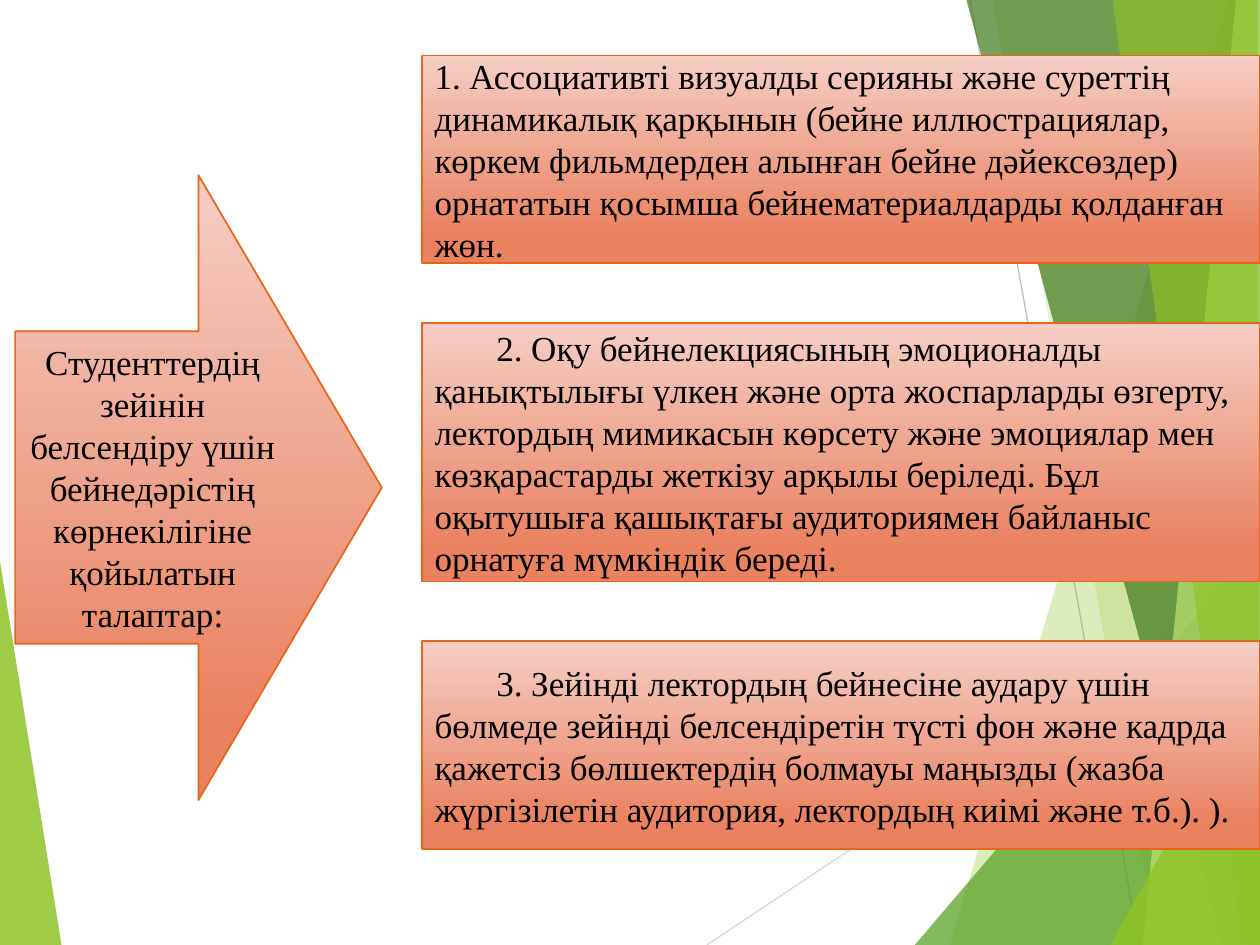
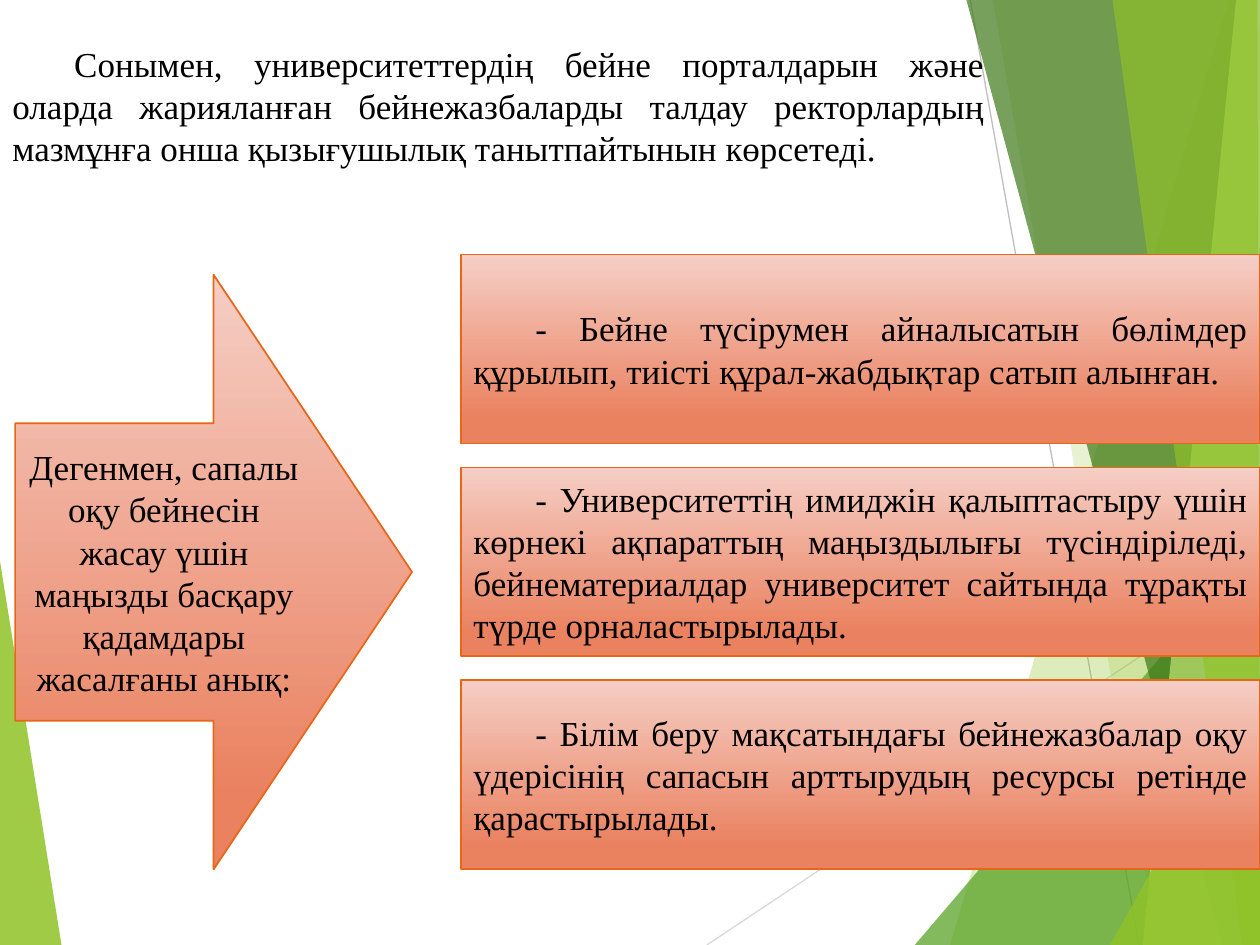
"""Build two slides on video lectures over a green faceted backdrop."""
from dataclasses import dataclass

from lxml import etree
from pptx import Presentation
from pptx.dml.color import RGBColor
from pptx.enum.shapes import MSO_CONNECTOR, MSO_SHAPE
from pptx.enum.text import MSO_ANCHOR, MSO_AUTO_SIZE, PP_ALIGN
from pptx.oxml.ns import qn
from pptx.util import Inches, Pt

ARROW, RECT = MSO_SHAPE.RIGHT_ARROW, MSO_SHAPE.RECTANGLE
LINE = MSO_CONNECTOR.STRAIGHT
MIDDLE, GROW = MSO_ANCHOR.MIDDLE, MSO_AUTO_SIZE.SHAPE_TO_FIT_TEXT
LEFT, CENTER, JUSTIFY = PP_ALIGN.LEFT, PP_ALIGN.CENTER, PP_ALIGN.JUSTIFY

COLS, ROWS = 100, 75
WIDTH, HEIGHT = Inches(10), Inches(7.5)
FONT, SIZE = "Times New Roman", Pt(20)
INDENT = 4.9
COLORS = {
    "lime": "90C226", "green": "54A021", "forest": "3F7819", "pale": "C0E474",
    "mist": "D9D9D9", "gray": "BFBFBF", "blush": "F5CEC5", "coral": "EA815F",
    "rust": "E76618", "black": "000000",
}


@dataclass(frozen=True)
class Facet:
    """A translucent polygon given by grid points."""
    color: str
    alpha: int
    points: tuple[tuple[float, float], ...]


@dataclass(frozen=True)
class Ray:
    """A thin line between two grid points."""
    color: str
    start: tuple[float, float]
    end: tuple[float, float]


@dataclass(frozen=True)
class Area:
    """A rectangle on the grid."""
    left: float
    top: float
    width: float
    height: float


@dataclass(frozen=True)
class Item:
    """A box's text, its height in rows and its first-line indent."""
    text: str
    height: float
    indent: float = INDENT


@dataclass(frozen=True)
class Page:
    """An arrow that points at a stack of boxes reaching the right edge."""
    arrow: Area
    claim: str
    left: float
    top: float
    gap: float
    align: PP_ALIGN
    items: tuple[Item, ...]
    intro: str = ""


DECOR = (
    Facet("lime", 85, ((-0.1, 43.9), (4.9, 75.1), (-0.1, 75))),
    Ray("mist", (56.1, 75), (100.1, 45.7)),
    Ray("gray", (77, 0), (90.4, 75)),
    Facet("lime", 30, ((97.5, 0), (75.4, 75), (100.2, 75.1), (100.1, 0))),
    Facet("lime", 20, ((78.8, 0), (91.9, 75), (100.1, 75), (100.1, 0))),
    Facet("green", 72, ((72.6, 75), (100, 42.9), (100.1, 75))),
    Facet("forest", 70, ((76.7, 0), (97, 75), (100.1, 75), (100.1, 0))),
    Facet("pale", 70, ((98.1, 0), (90.7, 75), (100.1, 75), (100, 0))),
    Facet("lime", 65, ((88.3, 0), (98.6, 75), (100, 75), (99.8, 0))),
    Facet("lime", 80, ((88.1, 75), (100.1, 53.5), (100.1, 75))),
)

INTRO = Area(0, 2.9, 79.1, 11.1)
PAGES = (
    Page(
        Area(1.2, 13.9, 29.1, 49.6),
        "Студенттердің зейінін белсендіру үшін бейнедәрістің көрнекілігіне "
        "қойылатын талаптар:",
        33.5, 4.4, 4.75, LEFT,
        (
            Item("1. Ассоциативті визуалды серияны және суреттің динамикалық "
                 "қарқынын (бейне иллюстрациялар, көркем фильмдерден алынған "
                 "бейне дәйексөздер) орнататын қосымша бейнематериалдарды "
                 "қолданған жөн.", 16.5, 0),
            Item("2. Оқу бейнелекциясының эмоционалды қанықтылығы үлкен және "
                 "орта жоспарларды өзгерту, лектордың мимикасын көрсету және "
                 "эмоциялар мен көзқарастарды жеткізу арқылы беріледі. Бұл "
                 "оқытушыға қашықтағы аудиториямен байланыс орнатуға "
                 "мүмкіндік береді.", 20.5),
            Item("3. Зейінді лектордың бейнесіне аудару үшін бөлмеде зейінді "
                 "белсендіретін түсті фон және кадрда қажетсіз бөлшектердің "
                 "болмауы маңызды (жазба жүргізілетін аудитория, лектордың "
                 "киімі және т.б.). ).", 16.5),
        ),
    ),
    Page(
        Area(1.2, 21.8, 31.5, 47.2),
        "Дегенмен, сапалы оқу бейнесін жасау үшін маңызды басқару қадамдары "
        "жасалғаны анық:",
        36.6, 20.2, 1.9, JUSTIFY,
        (
            Item("- Бейне түсірумен айналысатын бөлімдер құрылып, тиісті "
                 "құрал-жабдықтар сатып алынған.", 15),
            Item("- Университеттің имиджін қалыптастыру үшін көрнекі "
                 "ақпараттың маңыздылығы түсіндіріледі, бейнематериалдар "
                 "университет сайтында тұрақты түрде орналастырылады.", 15),
            Item("- Білім беру мақсатындағы бейнежазбалар оқу үдерісінің "
                 "сапасын арттырудың ресурсы ретінде қарастырылады.", 15),
        ),
        "Сонымен, университеттердің бейне порталдарын және оларда "
        "жарияланған бейнежазбаларды талдау ректорлардың мазмұнға онша "
        "қызығушылық танытпайтынын көрсетеді.",
    ),
)


def col(count: float) -> int:
    """Turn grid columns into a length."""
    return round(WIDTH * count / COLS)


def row(count: float) -> int:
    """Turn grid rows into a length."""
    return round(HEIGHT * count / ROWS)


def frame(area: Area) -> tuple[int, int, int, int]:
    """Turn a grid area into left, top, width and height."""
    return col(area.left), row(area.top), col(area.width), row(area.height)


def paint(name: str) -> RGBColor:
    """Look up a named colour."""
    return RGBColor.from_string(COLORS[name])


def draw_facet(slide, facet: Facet) -> None:
    """Draw a translucent polygon."""
    first, *rest = [(col(x), row(y)) for x, y in facet.points]
    pen = slide.shapes.build_freeform(*first)
    pen.add_line_segments(rest, close=True)
    shape = pen.convert_to_shape()
    shape.shadow.inherit = False
    shape.line.fill.background()
    shape.fill.solid()
    shape.fill.fore_color.rgb = paint(facet.color)
    tint = shape.element.spPr.find(qn("a:solidFill"))[0]
    etree.SubElement(tint, qn("a:alpha"), val=str(facet.alpha * 1000))


def draw_ray(slide, ray: Ray) -> None:
    """Draw a thin line."""
    (x, y), (u, v) = ray.start, ray.end
    line = slide.shapes.add_connector(LINE, col(x), row(y), col(u), row(v))
    line.line.color.rgb = paint(ray.color)
    line.line.width = Pt(0.75)
    etree.SubElement(line.element.spPr, qn("a:effectLst"))


def set_decor(deck, layout) -> None:
    """Draw the backdrop on the first slide and move it to the layout."""
    for holder in list(layout.placeholders):
        holder.element.getparent().remove(holder.element)
    slide = deck.slides[0]
    for part in DECOR:
        if isinstance(part, Facet):
            draw_facet(slide, part)
        else:
            draw_ray(slide, part)
    for shape in list(slide.shapes):
        layout.element.cSld.spTree.append(shape.element)


def write(shape, text: str, align: PP_ALIGN, indent: float = 0) -> None:
    """Set one paragraph of black body text."""
    shape.text_frame.word_wrap = True
    para = shape.text_frame.paragraphs[0]
    para.text = text
    para.alignment = align
    para.font.name, para.font.size = FONT, SIZE
    para.font.color.rgb = paint("black")
    if indent:
        props = para._p.get_or_add_pPr()
        props.set("marL", "0")
        props.set("indent", str(col(indent)))


def draw_block(slide, kind: MSO_SHAPE, area: Area, text: str,
               align: PP_ALIGN, indent: float = 0) -> None:
    """Draw a coral gradient shape with text."""
    shape = slide.shapes.add_shape(kind, *frame(area))
    shape.shadow.inherit = False
    shape.fill.gradient()
    shape.fill.gradient_angle = 270
    stops = zip(shape.fill.gradient_stops, (("blush", 0), ("coral", 0.88)))
    for stop, (name, place) in stops:
        stop.color.rgb = paint(name)
        stop.position = place
    shape.line.color.rgb = paint("rust")
    shape.line.width = Pt(1)
    shape.text_frame.vertical_anchor = MIDDLE
    write(shape, text, align, indent)
    if indent:
        shape.text_frame.paragraphs[0].space_after = Pt(8)


def draw_page(slide, page: Page) -> None:
    """Draw the intro, the arrow and the stacked boxes."""
    if page.intro:
        box = slide.shapes.add_textbox(*frame(INTRO))
        write(box, page.intro, JUSTIFY, INDENT)
        box.text_frame.auto_size = GROW
    draw_block(slide, ARROW, page.arrow, page.claim, CENTER)
    top = page.top
    for item in page.items:
        area = Area(page.left, top, COLS - page.left, item.height)
        draw_block(slide, RECT, area, item.text, page.align, item.indent)
        top += item.height + page.gap


def main() -> None:
    """Build and save the deck."""
    deck = Presentation()
    deck.slide_width, deck.slide_height = WIDTH, HEIGHT
    layout = deck.slide_layouts[6]
    slides = [deck.slides.add_slide(layout) for _ in PAGES]
    set_decor(deck, layout)
    for slide, page in zip(slides, PAGES):
        draw_page(slide, page)
    deck.save("out.pptx")


if __name__ == "__main__":
    main()
